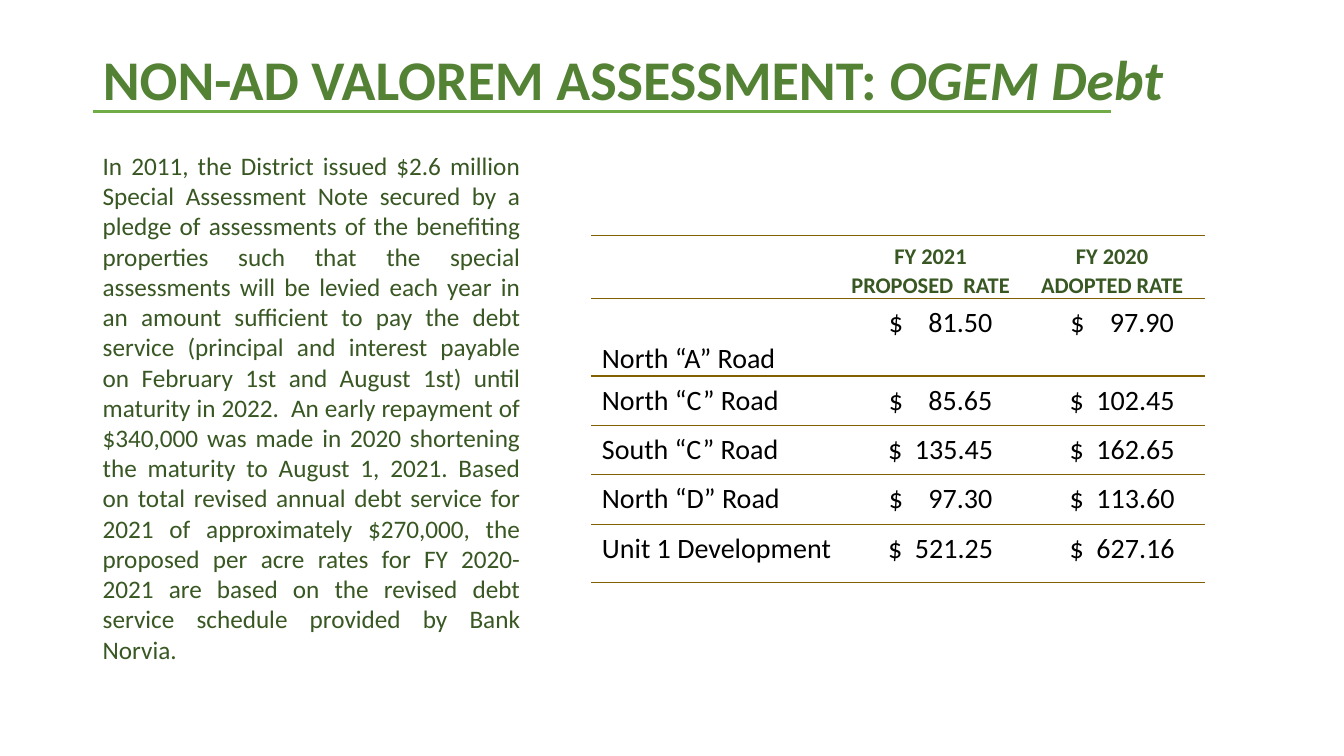
from lxml import etree
from pptx import Presentation
from pptx.dml.color import RGBColor
from pptx.enum.shapes import MSO_CONNECTOR
from pptx.enum.text import MSO_ANCHOR, MSO_AUTO_SIZE, PP_ALIGN
from pptx.oxml.ns import qn
from pptx.util import Inches, Pt

TITLE_GREEN = RGBColor(0x54, 0x82, 0x35)
RULE_GREEN = RGBColor(0x70, 0xAD, 0x47)
TEXT_GREEN = RGBColor(0x38, 0x57, 0x23)
BORDER_BROWN = RGBColor(0x80, 0x60, 0x00)
BLACK = RGBColor(0, 0, 0)
WHITE = RGBColor(0xFF, 0xFF, 0xFF)
LEFT, CENTER, JUSTIFY = PP_ALIGN.LEFT, PP_ALIGN.CENTER, PP_ALIGN.JUSTIFY
TOP, BOTTOM = MSO_ANCHOR.TOP, MSO_ANCHOR.BOTTOM
STRAIGHT = MSO_CONNECTOR.STRAIGHT
NO_AUTOSIZE = MSO_AUTO_SIZE.NONE

TITLE_FONT = {"name": "Calibri", "size": Pt(40), "bold": True}
BODY_FONT = {"name": "Calibri", "size": Pt(18), "bold": False}
HEADER_FONT = {"name": "Calibri", "size": Pt(16), "bold": True}
RATE_FONT = {"name": "Calibri", "size": Pt(20), "bold": False}

DEBT_STORY = (
    "In 2011, the District issued $2.6 million Special Assessment Note secured by a "
    "pledge of assessments of the benefiting properties such that the special "
    "assessments will be levied each year in an amount sufficient to pay the debt "
    "service (principal and interest payable on February 1st and August 1st) until "
    "maturity in 2022.  An early repayment of $340,000 was made in 2020 shortening "
    "the maturity to August 1, 2021. Based on total revised annual debt service for "
    "2021 of approximately $270,000, the proposed per acre rates for FY 2020-2021 are "
    "based on the revised debt service schedule provided by Bank Norvia.")

RATES = [
    ("", "FY 2021\nPROPOSED  RATE", "FY 2020\nADOPTED RATE"),
    ("North “A” Road", "$    81.50", "$    97.90"),
    ("North “C” Road", "$    85.65", "$  102.45"),
    ("South “C” Road", "$  135.45", "$  162.65"),
    ("North “D” Road", "$    97.30", "$  113.60"),
    ("Unit 1 Development", "$  521.25", "$  627.16"),
]
COLUMN_WIDTHS = (2.49, 1.8, 1.8)
ROW_HEIGHTS = (0.62, 0.77, 0.49, 0.49, 0.49, 0.58)


def set_attributes(target, values):
    for key, value in values.items():
        setattr(target, key, value)


def add_run(paragraph, text, font, color, **extra):
    run = paragraph.add_run()
    run.text = text
    set_attributes(run.font, {**font, **extra})
    run.font.color.rgb = color


def add_heading(slide, left, top, width, height):
    """Title with the green rule under it."""
    title = slide.shapes.title
    set_attributes(title, {"left": Inches(left), "top": Inches(top),
                           "width": Inches(width), "height": Inches(height)})
    frame = title.text_frame
    set_attributes(frame, {"vertical_anchor": TOP, "margin_top": Inches(0.12),
                           "word_wrap": True, "auto_size": NO_AUTOSIZE})
    paragraph = frame.paragraphs[0]
    set_attributes(paragraph, {"alignment": LEFT, "line_spacing": 0.9})
    add_run(paragraph, "NON-AD VALOREM ASSESSMENT: ", TITLE_FONT, TITLE_GREEN)
    add_run(paragraph, "OGEM Debt", TITLE_FONT, TITLE_GREEN, italic=True)

    rule_y = Inches(top + 0.71)
    rule = slide.shapes.add_connector(
        STRAIGHT, Inches(left), rule_y, Inches(left + 10.1), rule_y)
    rule.line.color.rgb = RULE_GREEN
    rule.line.width = Pt(2)
    etree.SubElement(rule._element.spPr, qn("a:effectLst"))


def add_debt_story(slide, left, top, width, height):
    """Justified paragraph on the left."""
    story = slide.shapes.add_textbox(
        Inches(left), Inches(top), Inches(width), Inches(height))
    story.text_frame.word_wrap = True
    paragraph = story.text_frame.paragraphs[0]
    paragraph.alignment = JUSTIFY
    add_run(paragraph, DEBT_STORY, BODY_FONT, TEXT_GREEN)


def set_borders(cell):
    """Lines above and below the cell, none at its sides."""
    properties = cell._tc.get_or_add_tcPr()
    for index, side in enumerate(("lnL", "lnR", "lnT", "lnB")):
        line = etree.Element(qn(f"a:{side}"), w=str(Pt(1)))
        if side in ("lnT", "lnB"):
            fill = etree.SubElement(line, qn("a:solidFill"))
            etree.SubElement(fill, qn("a:srgbClr"), val=str(BORDER_BROWN))
        else:
            etree.SubElement(line, qn("a:noFill"))
        properties.insert(index, line)


def fill_cell(cell, text, row, column):
    set_attributes(cell, {"margin_left": 0, "margin_top": Inches(0.05),
                          "margin_right": Inches(0.04), "margin_bottom": 0})
    cell.vertical_anchor = BOTTOM if (row, column) == (1, 0) else TOP
    cell.fill.solid()
    cell.fill.fore_color.rgb = WHITE
    set_borders(cell)

    font, color = (RATE_FONT, BLACK) if row else (HEADER_FONT, TEXT_GREEN)
    indent = 0 if row == 0 else 0.2 if column else 0.11
    for number, words in enumerate(text.split("\n")):
        frame = cell.text_frame
        paragraph = frame.add_paragraph() if number else frame.paragraphs[0]
        set_attributes(paragraph, {"alignment": CENTER if column else LEFT,
                                   "line_spacing": 1.07})
        paragraph._p.get_or_add_pPr().set("marL", str(Inches(indent)))
        if words:
            add_run(paragraph, words, font, color)


def add_rate_table(slide, left, top):
    """Rates per road for both fiscal years."""
    table = slide.shapes.add_table(
        len(RATES), len(COLUMN_WIDTHS), Inches(left), Inches(top),
        Inches(sum(COLUMN_WIDTHS)), Inches(sum(ROW_HEIGHTS))).table
    set_attributes(table, {"first_row": False, "horz_banding": False})
    for column, width in zip(table.columns, COLUMN_WIDTHS):
        column.width = Inches(width)
    for row, height in zip(table.rows, ROW_HEIGHTS):
        row.height = Inches(height)
    for row, texts in enumerate(RATES):
        for column, text in enumerate(texts):
            fill_cell(table.cell(row, column), text, row, column)


def main():
    deck = Presentation()
    deck.slide_width, deck.slide_height = Inches(13.33), Inches(7.5)
    slide = deck.slides.add_slide(deck.slide_layouts.get_by_name("Title Only"))
    add_heading(slide, 0.92, 0.4, 11.5, 1.45)
    add_debt_story(slide, 0.92, 1.44, 4.34, 5.25)
    add_rate_table(slide, 5.86, 2.34)
    deck.save("out.pptx")


if __name__ == "__main__":
    main()
